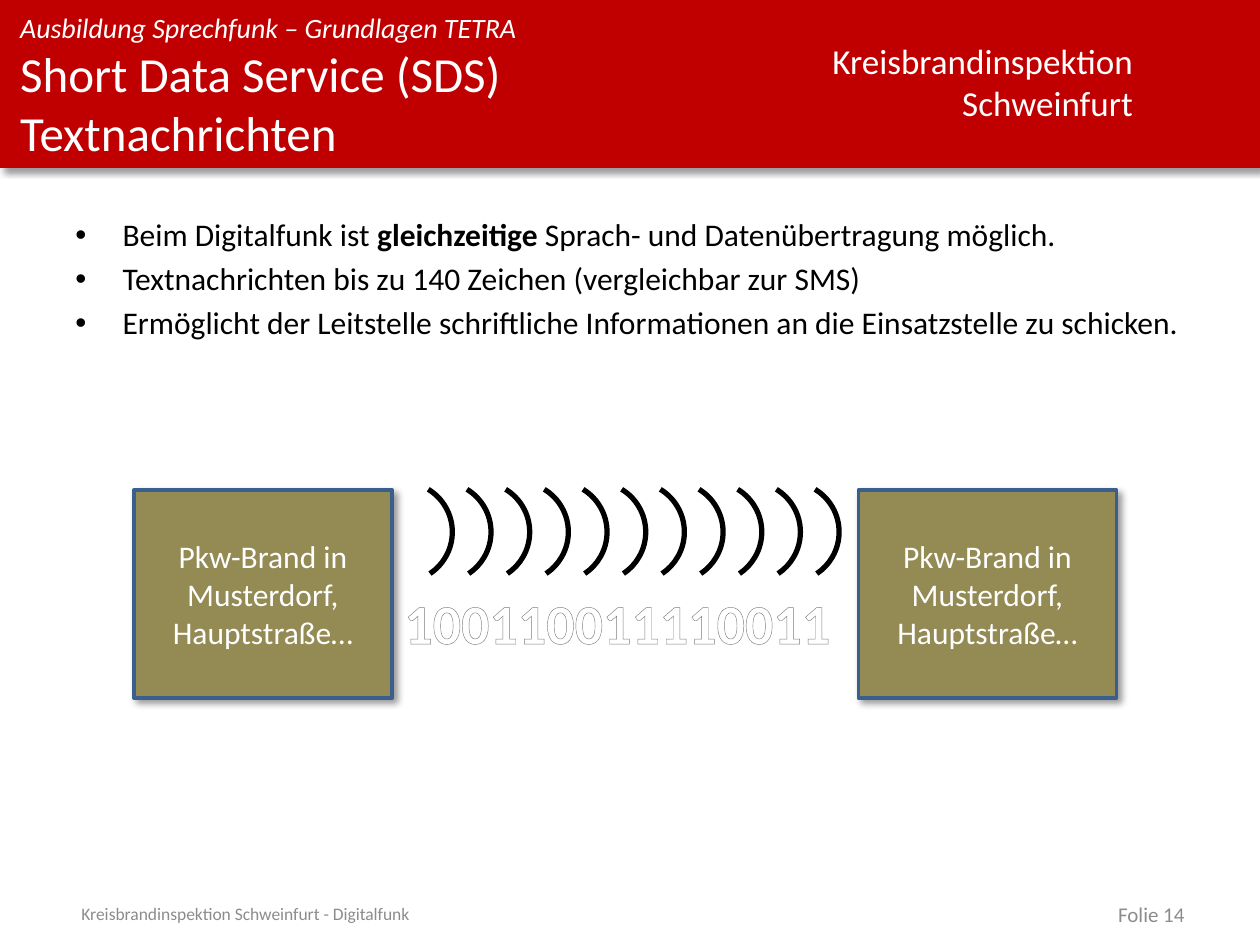
from lxml import etree
from pptx import Presentation
from pptx.dml.color import RGBColor
from pptx.enum.shapes import MSO_SHAPE as Shape
from pptx.enum.text import MSO_ANCHOR as Anchor, MSO_AUTO_SIZE as Auto, PP_ALIGN as Align
from pptx.oxml import parse_xml
from pptx.oxml.ns import nsdecls, qn
from pptx.util import Pt

WHITE, BLACK, GREY = "FFFFFF", "000000", "8C8C8C"
BULLETS = [
    [("Beim Digitalfunk ist ", False), ("gleichzeitige", True),
     (" Sprach- und Datenübertragung möglich.", False)],
    [("Textnachrichten bis zu 140 Zeichen (vergleichbar zur SMS)", False)],
    [("Ermöglicht der Leitstelle schriftliche Informationen "
      "an die Einsatzstelle zu schicken.", False)],
]
STOPS = [(0, WHITE), (9, WHITE), (50, "7F7F7F"), (79, WHITE), (100, WHITE)]


def color(code):
    return RGBColor.from_string(code)


def style(par, size, code, align=Align.LEFT):
    par.alignment = align
    font = par.font
    font.name, font.size = "Calibri", Pt(size)
    font.color.rgb = color(code)
    return font


def place(shape, x, y, w, h):
    shape.left, shape.top, shape.width, shape.height = Pt(x), Pt(y), Pt(w), Pt(h)


def no_inset(frame):
    frame.margin_left = frame.margin_right = frame.margin_top = frame.margin_bottom = 0


def add_text(slide, x, y, w, h, text, size, code, align=Align.LEFT, anchor=Anchor.TOP):
    frame = slide.shapes.add_textbox(Pt(x), Pt(y), Pt(w), Pt(h)).text_frame
    frame.word_wrap = True
    frame.vertical_anchor = anchor
    frame.text = text
    for par in frame.paragraphs:
        style(par, size, code, align)
    return frame


def add_rect(slide, x, y, w, h, fill):
    rect = slide.shapes.add_shape(Shape.RECTANGLE, Pt(x), Pt(y), Pt(w), Pt(h))
    rect.fill.solid()
    rect.fill.fore_color.rgb = color(fill)
    rect.line.fill.background()
    return rect


def add_shadow(shape):
    # Called after fill and line, so the effect list comes last
    shape.shadow.inherit = False
    effects = shape.element.spPr.find(qn("a:effectLst"))
    effects.append(parse_xml(
        f'<a:outerShdw {nsdecls("a")} blurRad="{Pt(4)}" dist="{Pt(3)}" dir="2700000" '
        f'algn="tl" rotWithShape="0"><a:srgbClr val="{BLACK}"><a:alpha val="40000"/>'
        '</a:srgbClr></a:outerShdw>'))


def add_header(slide, x, y, w, h):
    band = add_rect(slide, x, y, w, h, "C00000")
    add_shadow(band)
    # Title sits in front of the band
    title = slide.shapes.title
    band.element.addnext(title.element)
    place(title, x + 11.5, y + 25, 455, 71)
    frame = title.text_frame
    frame.text = "Short Data Service (SDS)\vTextnachrichten"
    frame.word_wrap = True
    frame.auto_size = Auto.NONE
    frame.vertical_anchor = Anchor.TOP
    no_inset(frame)
    style(frame.paragraphs[0], 28, WHITE)
    # Course name and organisation
    course = add_text(slide, x + 11.5, y + 6, 455, 19.5,
                      "Ausbildung Sprechfunk – Grundlagen TETRA", 16, WHITE)
    no_inset(course)
    course.paragraphs[0].font.italic = True
    owner = add_text(slide, x + 466.5, y + 19, 188, 55.5,
                     "Kreisbrandinspektion\nSchweinfurt", 20, WHITE, Align.RIGHT)
    owner.word_wrap = False


def add_bullets(slide, x, y, w, h):
    frame = add_text(slide, x, y, w, h, "", 18, BLACK)
    for i, parts in enumerate(BULLETS):
        par = frame.add_paragraph() if i else frame.paragraphs[0]
        if i:
            par.space_before = Pt(3.6)
        props = par._p.get_or_add_pPr()
        props.set("marL", str(Pt(27)))
        props.set("indent", str(Pt(-27)))
        for old in props.findall(qn("a:defRPr")):
            props.remove(old)
        etree.SubElement(props, qn("a:buFont")).set("typeface", "Arial")
        etree.SubElement(props, qn("a:buChar")).set("char", "•")
        style(par, 18, BLACK)
        for text, bold in parts:
            run = par.add_run()
            run.text = text
            if bold:
                run.font.bold = True


def add_message(slide, x, y, w, h):
    box = add_rect(slide, x, y, w, h, "948A54")
    box.line.color.rgb = color("3A5F8C")
    box.line.width = Pt(2)
    add_shadow(box)
    frame = box.text_frame
    frame.word_wrap = True
    frame.vertical_anchor = Anchor.MIDDLE
    frame.text = "Pkw-Brand in Musterdorf, Hauptstraße…"
    style(frame.paragraphs[0], 18, WHITE, Align.CENTER)


def add_waves(slide, x, y, size, step, count):
    for i in range(count):
        arc = slide.shapes.add_shape(Shape.ARC, Pt(x + i * step), Pt(y), Pt(size), Pt(size))
        arc.adjustments[0], arc.adjustments[1] = 180.7, 33.89
        arc.fill.background()
        arc.line.color.rgb = color(BLACK)
        arc.line.width = Pt(3)
        arc.shadow.inherit = False


def add_bits(slide, x, y, w, h):
    frame = add_text(slide, x, y, w, h, "100110011110011", 32, WHITE)
    par = frame.paragraphs[0]
    par.font.bold = True
    # Outline and vertical gradient of the digits
    props = par.runs[0].font._element
    props.append(parse_xml(
        f'<a:ln {nsdecls("a")} w="{Pt(0.83)}"><a:solidFill>'
        '<a:srgbClr val="7D7D7D"/></a:solidFill></a:ln>'))
    stops = "".join(f'<a:gs pos="{pos * 1000}"><a:srgbClr val="{code}"/></a:gs>'
                    for pos, code in STOPS)
    props.append(parse_xml(
        f'<a:gradFill {nsdecls("a")}><a:gsLst>{stops}</a:gsLst>'
        '<a:lin ang="5400000" scaled="0"/></a:gradFill>'))


def add_diagram(slide, x, y, w, h):
    box = 147.5
    add_message(slide, x, y, box, h)
    add_bits(slide, x + box, y + 52.5, w - 2 * box, 46)
    add_message(slide, x + w - box, y, box, h)
    add_waves(slide, x + 125, y - 4.5, 57, 22.1, 11)


def add_footer(slide, x, y, w, h):
    add_text(slide, x, y, 435, h, "Kreisbrandinspektion Schweinfurt - Digitalfunk",
             10, GREY, anchor=Anchor.MIDDLE)
    add_text(slide, x + w - 168, y, 168, h, "Folie 14", 12, GREY, Align.RIGHT, Anchor.MIDDLE)


def main():
    deck = Presentation()
    deck.slide_width, deck.slide_height = Pt(720), Pt(540)
    slide = deck.slides.add_slide(deck.slide_layouts[5])
    add_header(slide, 0, 0, 720, 96)
    add_bullets(slide, 36, 119.5, 648, 363)
    add_diagram(slide, 76.5, 280, 561.5, 119)
    add_footer(slide, 39.5, 515, 644.5, 14.5)
    deck.save("out.pptx")


if __name__ == "__main__":
    main()
